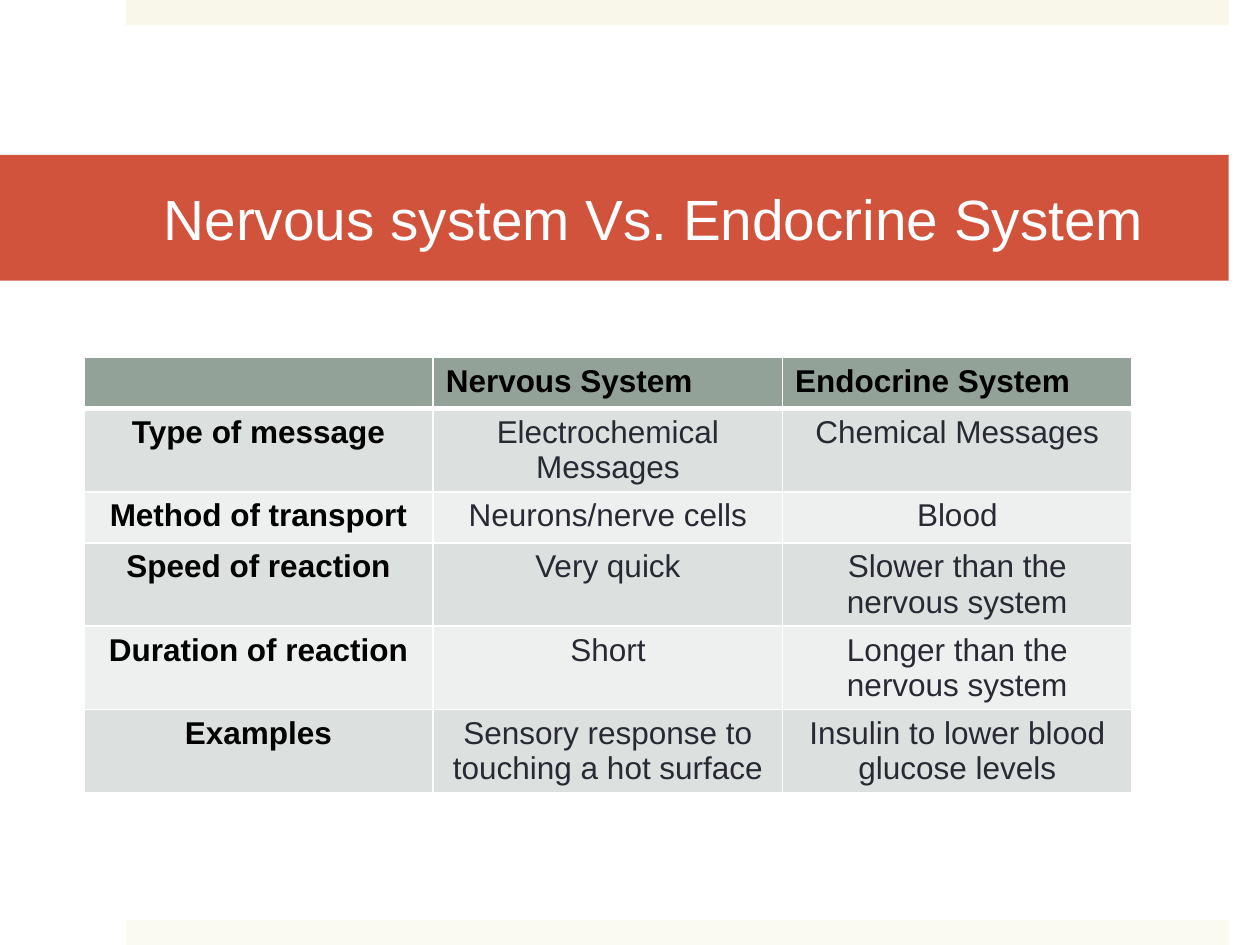
import dataclasses

import lxml.etree
import pptx
import pptx.dml.color
import pptx.enum.shapes
import pptx.enum.text
import pptx.oxml.ns
import pptx.util

Cm = pptx.util.Cm
Pt = pptx.util.Pt
PP_ALIGN = pptx.enum.text.PP_ALIGN


@dataclasses.dataclass(frozen=True)
class Theme:
    font: str = "Arial"
    title_size: float = 32.4
    table_size: float = 18
    white: str = "FFFFFF"
    black: str = "000000"
    body: str = "292934"
    title_bar: str = "D2533C"
    top_strip: str = "F8F7EA"
    bottom_strip: str = "FAFAF1"
    header: str = "93A299"
    bands: tuple = ("DCE0DE", "EEF0EF")
    border: float = 1
    header_rule: float = 3


THEME = Theme()

ROWS = [
    ("", "Nervous System", "Endocrine System"),
    ("Type of message", "Electrochemical Messages", "Chemical Messages"),
    ("Method of transport", "Neurons/nerve cells", "Blood"),
    ("Speed of reaction", "Very quick", "Slower than the nervous system"),
    ("Duration of reaction", "Short", "Longer than the nervous system"),
    ("Examples", "Sensory response to touching a hot surface",
     "Insulin to lower blood glucose levels"),
]


def rgb(color):
    return pptx.dml.color.RGBColor.from_string(color)


def fill_solid(target, color):
    target.fill.solid()
    target.fill.fore_color.rgb = rgb(color)


def style_text(p, size, color, bold=False, align=PP_ALIGN.LEFT):
    p.alignment = align
    p.font.name = THEME.font
    p.font.size = Pt(size)
    p.font.bold = bold
    p.font.color.rgb = rgb(color)


def add_strip(slide, left, top, width, height, color):
    sp = slide.shapes.add_shape(pptx.enum.shapes.MSO_SHAPE.RECTANGLE,
                                left, top, width, height)
    sp.shadow.inherit = False
    fill_solid(sp, color)
    sp.line.fill.background()


def place_title(slide, left, top, width, height, text):
    sp = slide.shapes.title
    sp.left, sp.top, sp.width, sp.height = left, top, width, height
    fill_solid(sp, THEME.title_bar)
    tf = sp.text_frame
    tf.text = text
    tf.word_wrap = True
    tf.auto_size = pptx.enum.text.MSO_AUTO_SIZE.NONE
    tf.vertical_anchor = pptx.enum.text.MSO_ANCHOR.MIDDLE
    tf.margin_left, tf.margin_right = Cm(3.3), Cm(0.76)
    tf.margin_top = tf.margin_bottom = Cm(0.13)
    style_text(tf.paragraphs[0], THEME.title_size, THEME.white)


def set_borders(cell, widths):
    """Draw white borders; widths maps each side (L, R, T, B) to points."""
    qn = pptx.oxml.ns.qn
    tc_pr = cell._tc.get_or_add_tcPr()
    for i, (side, width) in enumerate(widths.items()):
        # Border lines must come before the cell's fill
        ln = lxml.etree.Element(qn(f"a:ln{side}"), w=str(Pt(width)))
        fill = lxml.etree.SubElement(ln, qn("a:solidFill"))
        lxml.etree.SubElement(fill, qn("a:srgbClr"), val=THEME.white)
        tc_pr.insert(i, ln)


def add_comparison_table(slide, left, top, width, row_height, rows):
    n_cols = len(rows[0])
    table = slide.shapes.add_table(len(rows), n_cols, left, top, width,
                                   row_height * len(rows)).table
    for col in table.columns:
        col.width = width // n_cols
    for r, texts in enumerate(rows):
        is_header = r == 0
        for c, text in enumerate(texts):
            cell = table.cell(r, c)
            fill_solid(cell, THEME.header if is_header
                       else THEME.bands[(r - 1) % 2])
            cell.text = text
            bold = is_header or c == 0
            style_text(cell.text_frame.paragraphs[0], THEME.table_size,
                       THEME.black if bold else THEME.body, bold,
                       PP_ALIGN.LEFT if is_header else PP_ALIGN.CENTER)
            widths = dict.fromkeys("LRTB", THEME.border)
            if r <= 1:
                # Heavier rule between the header and the body
                widths["B" if is_header else "T"] = THEME.header_rule
            set_borders(cell, widths)


def main():
    prs = pptx.Presentation()
    prs.slide_width, prs.slide_height = Cm(25.4), Cm(19.05)
    slide = prs.slides.add_slide(prs.slide_layouts.get_by_name("Title Only"))

    # Pale strips along the top and bottom edges
    strip_height = Cm(0.51)
    for top, color in ((0, THEME.top_strip),
                       (prs.slide_height - strip_height, THEME.bottom_strip)):
        add_strip(slide, Cm(2.54), top, Cm(22.23), strip_height, color)

    # Title bar
    place_title(slide, 0, Cm(3.12), Cm(24.77), Cm(2.54),
                "Nervous system Vs. Endocrine System")

    # Comparison table
    add_comparison_table(slide, Cm(1.69), Cm(7.21), Cm(21.13), Cm(1.03), ROWS)

    prs.save("out.pptx")


if __name__ == "__main__":
    main()
